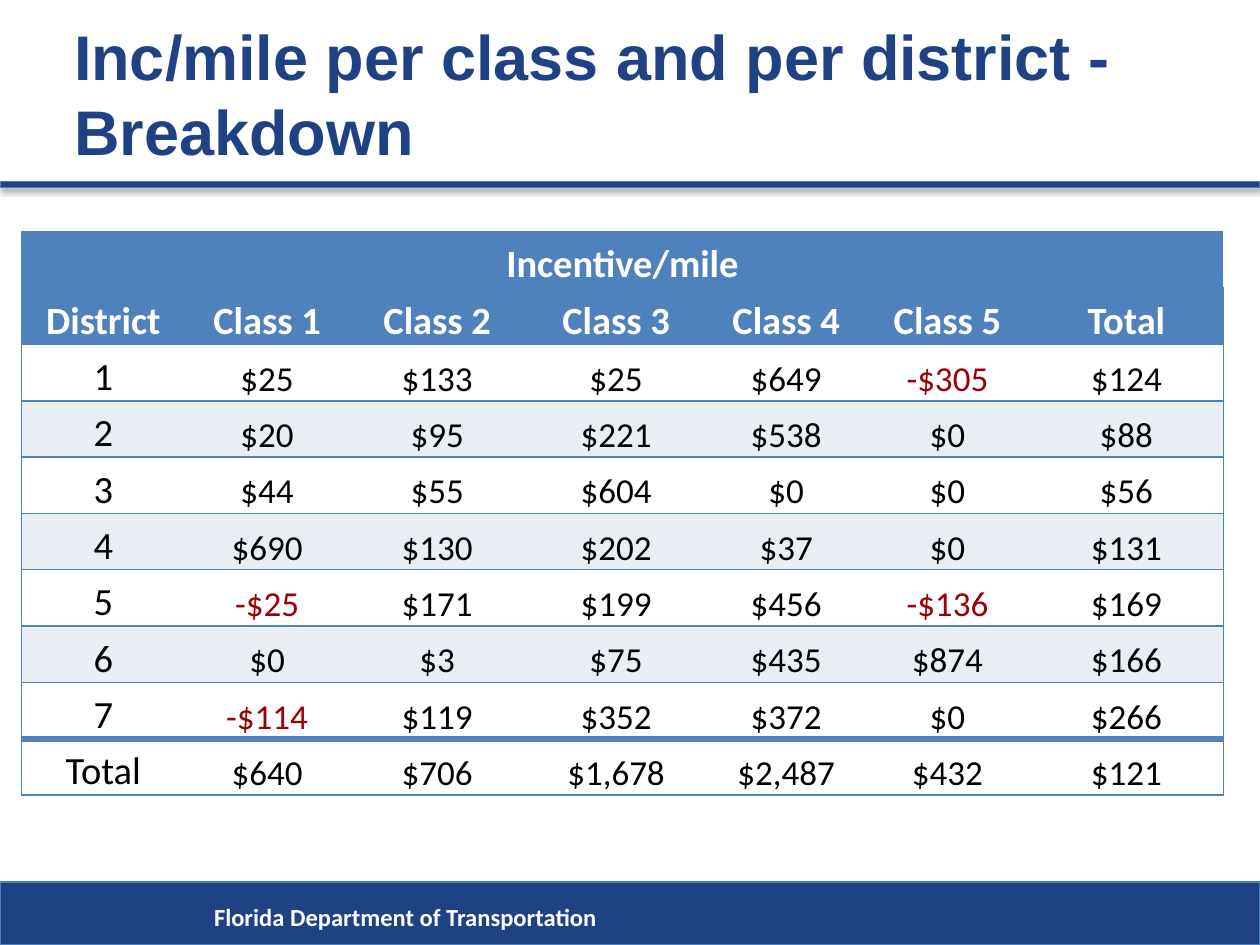
from lxml.etree import SubElement
from pptx import Presentation
from pptx.dml.color import RGBColor
from pptx.enum.shapes import MSO_SHAPE as Shape
from pptx.enum.text import MSO_ANCHOR as Anchor, PP_ALIGN as Align
from pptx.oxml.ns import qn
from pptx.util import Inches, Pt

NAVY, BLUE, BAND = "1F4284", "4F81BD", "E9EDF4"
WHITE, BLACK, RED = "FFFFFF", "000000", "9C0006"
NO_STYLE = "{2D5ABB26-0587-4C30-8999-92F81FD0307C}"
COLUMN_WIDTHS = [1.3, 1.3, 1.4, 1.44, 1.26, 1.3, 1.54]
ROWS = [
    ["Incentive/mile", "", "", "", "", "", ""],
    ["District", "Class 1", "Class 2", "Class 3", "Class 4", "Class 5", "Total"],
    ["1", "$25", "$133", "$25", "$649", "-$305", "$124"],
    ["2", "$20", "$95", "$221", "$538", "$0", "$88"],
    ["3", "$44", "$55", "$604", "$0", "$0", "$56"],
    ["4", "$690", "$130", "$202", "$37", "$0", "$131"],
    ["5", "-$25", "$171", "$199", "$456", "-$136", "$169"],
    ["6", "$0", "$3", "$75", "$435", "$874", "$166"],
    ["7", "-$114", "$119", "$352", "$372", "$0", "$266"],
    ["Total", "$640", "$706", "$1,678", "$2,487", "$432", "$121"],
]


def color(value):
    return RGBColor.from_string(value)


def set_font(paragraph, name, size, value, bold=False):
    font = paragraph.font
    font.name, font.size, font.bold = name, Pt(size), bold
    font.color.rgb = color(value)


def add_bar(slide, left, top, width, height):
    """Navy bar with a soft shadow below it."""
    shape = slide.shapes.add_shape(
        Shape.RECTANGLE, Inches(left), Inches(top), Inches(width), Inches(height))
    shape.fill.solid()
    shape.fill.fore_color.rgb = color(NAVY)
    shape.line.color.rgb = color("4B7EBC")
    shape.line.width = Pt(0.75)
    shape.shadow.inherit = False
    effects = shape._element.spPr.find(qn("a:effectLst"))
    shadow = SubElement(effects, qn("a:outerShdw"), blurRad=str(Pt(3.1)),
                        dist=str(Pt(1.8)), dir="5400000", rotWithShape="0")
    shade = SubElement(shadow, qn("a:srgbClr"), val=BLACK)
    SubElement(shade, qn("a:alpha"), val="35000")


def add_text(slide, left, top, width, height, text, name, size, value, anchor):
    box = slide.shapes.add_textbox(
        Inches(left), Inches(top), Inches(width), Inches(height))
    frame = box.text_frame
    frame.word_wrap = True
    frame.vertical_anchor = anchor
    frame.text = text
    set_font(frame.paragraphs[0], name, size, value, bold=True)


def set_border(cell, side, points):
    """Draw one cell edge; zero points leaves it empty."""
    line = SubElement(cell._tc.get_or_add_tcPr(), qn("a:ln" + side), w=str(Pt(points)))
    if points:
        fill = SubElement(line, qn("a:solidFill"))
        SubElement(fill, qn("a:srgbClr"), val=BLUE)
    else:
        SubElement(line, qn("a:noFill"))


def style_cell(cell, text, row, column):
    last_row, last_column = len(ROWS) - 1, len(COLUMN_WIDTHS) - 1
    header = row < 2
    # Borders come before the fill in the cell properties
    set_border(cell, "L", 1 if column == 0 else 0)
    set_border(cell, "R", 1 if column == last_column else 0)
    set_border(cell, "T", 4 if row == last_row else 1)
    set_border(cell, "B", 4 if row == last_row - 1 else 1)
    cell.fill.solid()
    banded = row % 2 == 1 and row < last_row
    cell.fill.fore_color.rgb = color(BLUE if header else BAND if banded else WHITE)
    cell.margin_left = cell.margin_right = cell.margin_top = cell.margin_bottom = 0
    cell.vertical_anchor = Anchor.BOTTOM
    cell.text = text
    paragraph = cell.text_frame.paragraphs[0]
    paragraph.alignment = Align.CENTER
    size = 22 if header or column == 0 else 20
    value = WHITE if header else RED if text.startswith("-") else BLACK
    set_font(paragraph, "Calibri", size, value, bold=header)


def add_incentive_table(slide, left, top, width, height):
    table = slide.shapes.add_table(
        len(ROWS), len(COLUMN_WIDTHS),
        Inches(left), Inches(top), Inches(width), Inches(height)).table
    table._tbl.tblPr.find(qn("a:tableStyleId")).text = NO_STYLE
    table.first_row = table.horz_banding = False
    for column, column_width in zip(table.columns, COLUMN_WIDTHS):
        column.width = Inches(column_width)
    for row, texts in enumerate(ROWS):
        for column, text in enumerate(texts):
            style_cell(table.cell(row, column), text, row, column)
    table.cell(0, 0).merge(table.cell(0, len(COLUMN_WIDTHS) - 1))


def add_header(slide, left, top, width, height):
    add_text(slide, left + 0.49, top + 0.11, width - 1, height - 0.24,
             "Inc/mile per class and per district - Breakdown",
             "Arial", 36, NAVY, Anchor.MIDDLE)
    add_bar(slide, left, top + height - 0.05, width, 0.05)


def add_footer(slide, left, top, width, height):
    add_bar(slide, left, top, width, height)
    add_text(slide, left + 1.6, top + 0.11, width - 2.02, 0.34,
             "Florida Department of Transportation",
             "Calibri", 14, WHITE, Anchor.TOP)


def main():
    presentation = Presentation()
    presentation.slide_width, presentation.slide_height = Inches(10), Inches(7.5)
    slide = presentation.slides.add_slide(presentation.slide_layouts[6])
    add_header(slide, 0, 0, 10, 1.49)
    add_footer(slide, 0, 7, 10, 0.5)
    add_incentive_table(slide, 0.17, 1.84, 9.55, 4.47)
    presentation.save("out.pptx")


if __name__ == "__main__":
    main()
